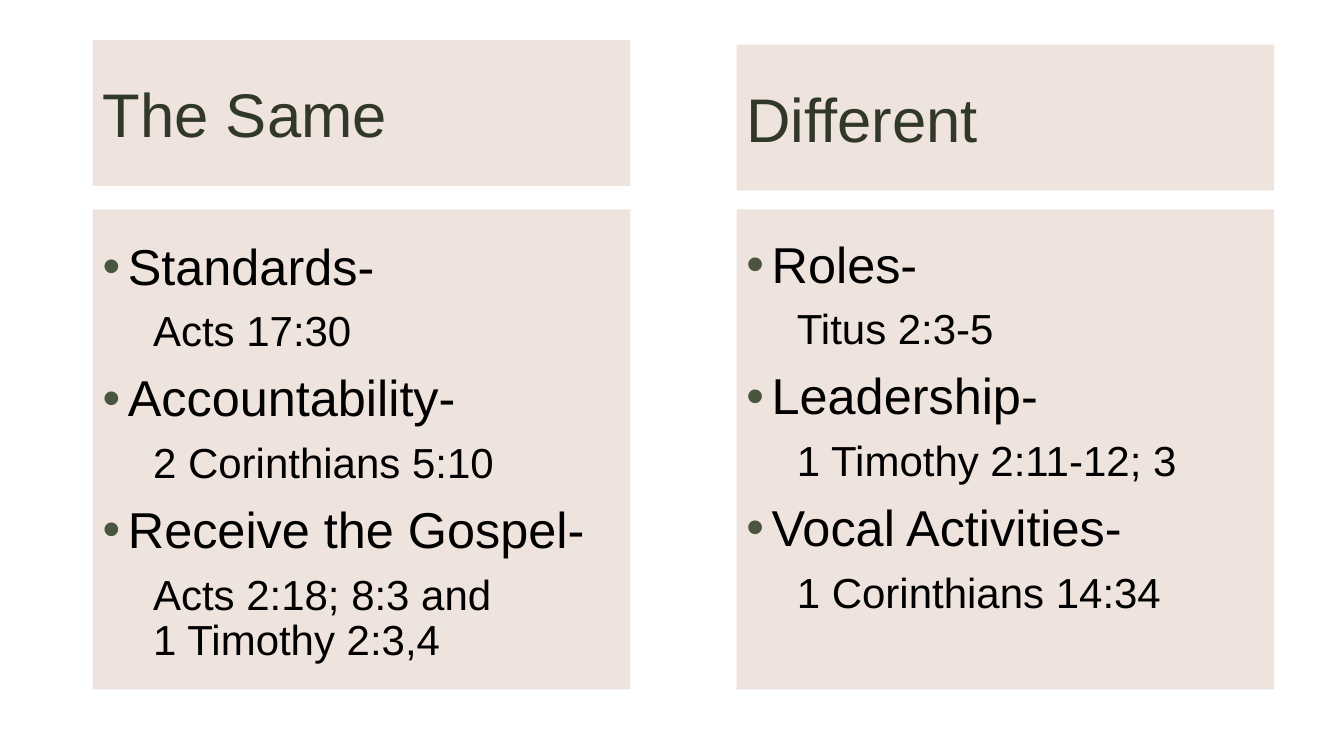
from lxml import etree
from pptx import Presentation
from pptx import util as u
from pptx.dml.color import RGBColor
from pptx.enum import text
from pptx.oxml.ns import qn

COLORS = {"panel": "EBDCD5", "heading": "313829", "body": "000000", "bullet": "4A543E"}
WIDTH, HEIGHT = 13.33, 7.5
LEFTS = (0.069, 0.548)  # column lefts, shares of the slide width
COLUMN_WIDTH = 0.4
HEADING_HEIGHT = 0.193
BODY_TOP, BODY_HEIGHT = 0.277, 0.635

# heading, heading top (share of height), first-line inset (inches), topics
COLUMNS = [
    ("The Same", 0.053, 0.32, [
        ("Standards-", "Acts 17:30"),
        ("Accountability-", "2 Corinthians 5:10"),
        ("Receive the Gospel-", "Acts 2:18; 8:3 and\n1 Timothy 2:3,4"),
    ]),
    ("Different", 0.059, 0.3, [
        ("Roles-", "Titus 2:3-5"),
        ("Leadership-", "1 Timothy 2:11-12; 3"),
        ("Vocal Activities-", "1 Corinthians 14:34"),
    ]),
]


def write(paragraph, words, size=30, color="body", indent=0, hanging=0,
          bullet=False, level=0, spacing=1.0, before=0):
    """Fill one paragraph and format it; a newline is a line break."""
    paragraph.text = words
    paragraph.level = level
    paragraph.alignment = text.PP_ALIGN.LEFT
    paragraph.line_spacing = spacing
    paragraph.space_before = u.Pt(before)
    properties = paragraph._p.get_or_add_pPr()
    properties.set("marL", str(u.Inches(indent)))
    properties.set("indent", str(u.Inches(-hanging)))
    if bullet:
        tint = etree.SubElement(properties, qn("a:buClr"))
        etree.SubElement(tint, qn("a:srgbClr"), val=COLORS["bullet"])
        etree.SubElement(properties, qn("a:buFont"), typeface="Arial")
        etree.SubElement(properties, qn("a:buChar"), char="•")
    else:
        etree.SubElement(properties, qn("a:buNone"))
    for run in paragraph.runs:
        run.font.name = "Arial"
        run.font.size = u.Pt(size)
        run.font.color.rgb = RGBColor.from_string(COLORS[color])


class Comparison:
    """Two-column slide with tinted panels, placed by shares of its size."""

    def __init__(self):
        self.deck = Presentation()
        self.deck.slide_width = u.Inches(WIDTH)
        self.deck.slide_height = u.Inches(HEIGHT)
        self.slide = self.deck.slides.add_slide(self.deck.slide_layouts[5])

    def panel(self, left, top, height, shape=None, anchor=text.MSO_ANCHOR.TOP, inset=0.05):
        """Place a tinted text panel, or turn the given shape into one."""
        shape = shape or self.slide.shapes.add_textbox(0, 0, 0, 0)
        shape.left, shape.top = u.Inches(left * WIDTH), u.Inches(top * HEIGHT)
        shape.width, shape.height = u.Inches(COLUMN_WIDTH * WIDTH), u.Inches(height * HEIGHT)
        shape.fill.solid()
        shape.fill.fore_color.rgb = RGBColor.from_string(COLORS["panel"])
        tint = shape._element.spPr.find(qn("a:solidFill")).find(qn("a:srgbClr"))
        etree.SubElement(tint, qn("a:alpha"), val="80000")
        frame = shape.text_frame
        frame.word_wrap = True
        frame.auto_size = text.MSO_AUTO_SIZE.NONE
        frame.vertical_anchor = anchor
        frame.margin_left = frame.margin_right = u.Inches(0.1)
        frame.margin_top, frame.margin_bottom = u.Inches(inset), u.Inches(0.05)
        return frame

    def heading(self, words, left, top, shape=None):
        frame = self.panel(left, top, HEADING_HEIGHT, shape, text.MSO_ANCHOR.MIDDLE)
        write(frame.paragraphs[0], words, size=44, color="heading")

    def topics(self, pairs, left, inset):
        frame = self.panel(left, BODY_TOP, BODY_HEIGHT, inset=inset)
        for number, (topic, verses) in enumerate(pairs):
            first = number == 0
            write(frame.paragraphs[0] if first else frame.add_paragraph(), topic,
                  size=36, indent=0.25, hanging=0.25, bullet=True,
                  spacing=0.9, before=0 if first else 12.4)
            write(frame.add_paragraph(), verses, indent=0.5, level=1,
                  spacing=0.9, before=10.4)


def main():
    page = Comparison()
    # The first heading is the slide title
    title = page.slide.shapes.title
    for left, (heading, top, inset, pairs) in zip(LEFTS, COLUMNS):
        page.heading(heading, left, top, title)
        page.topics(pairs, left, inset)
        title = None
    page.deck.save("out.pptx")


if __name__ == "__main__":
    main()
